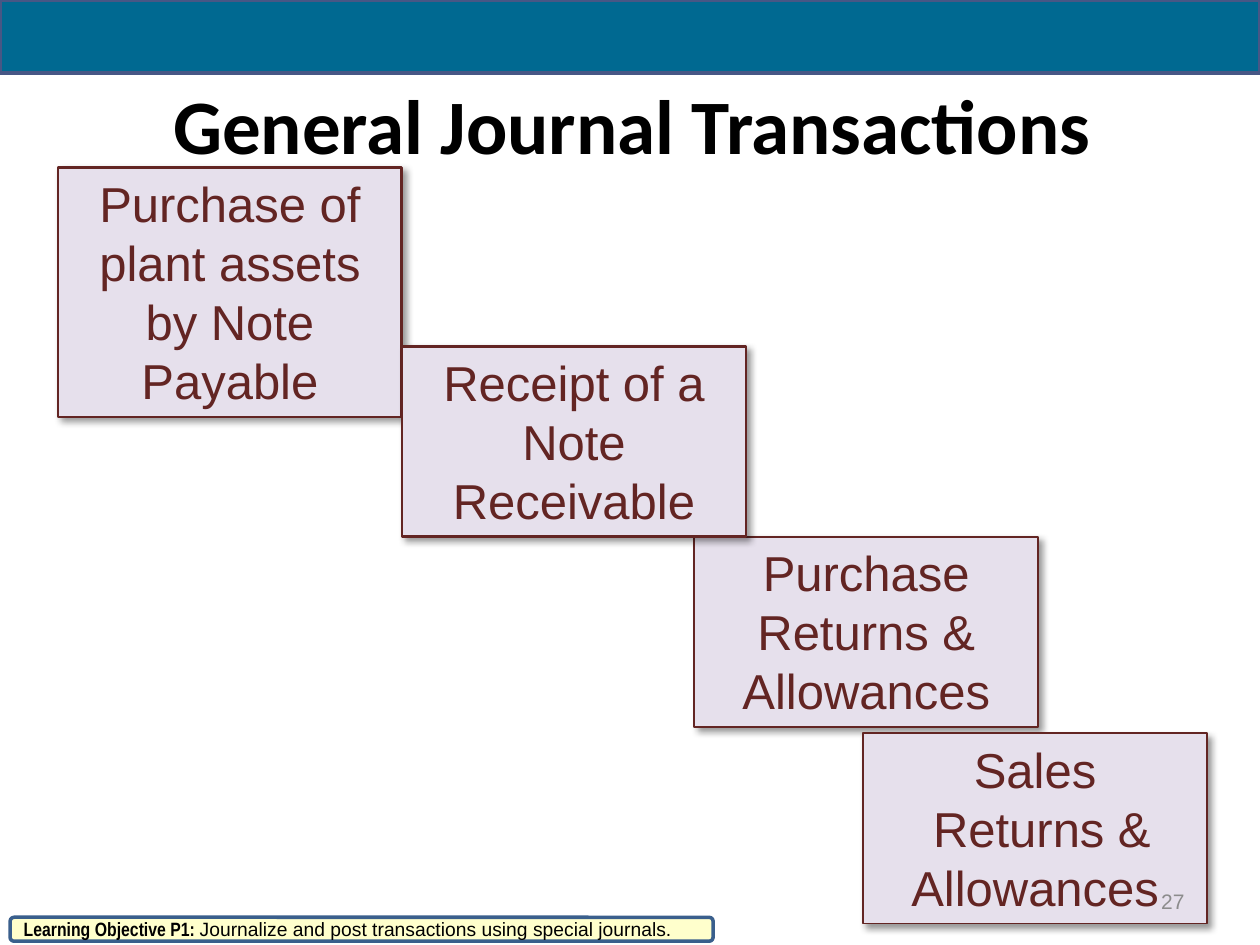
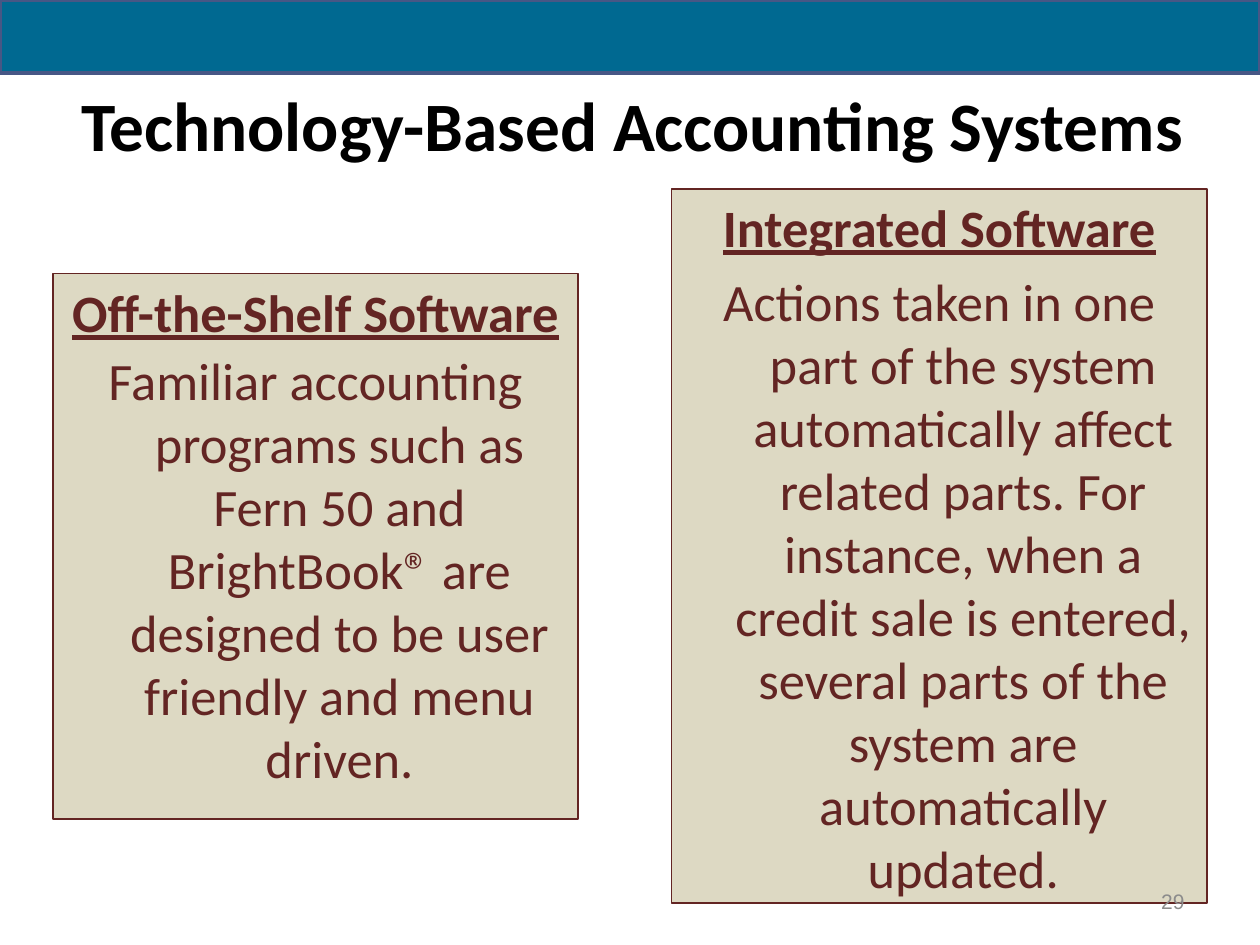
from lxml.etree import SubElement
from pptx import Presentation
from pptx.dml.color import RGBColor
from pptx.enum.shapes import MSO_SHAPE
from pptx.enum.text import MSO_ANCHOR, PP_ALIGN
from pptx.oxml.ns import qn
from pptx.util import Emu, Inches, Pt

WIDTH, HEIGHT = 10, 7.5
LEADING = 1.2
HANG = Inches(0.38)
COLORS = {
    "band": "006991", "band_edge": "475785", "title": "000000",
    "maroon": "632523", "lilac": "E6E0EC", "sand": "DDD9C3",
    "cream": "FFFFCC", "objective_edge": "3A5F8C", "number": "8C8C8C",
}

STEP_SIZE = 28
STEP_WIDTH = 2.73
STEPS = [
    ("Purchase of plant assets by Note Payable", 0.46, 1.33, 4, 1.5),
    ("Purchase Returns & Allowances", 5.51, 4.26, 3, 1),
    ("Receipt of a Note Receivable", 3.19, 2.75, 3, 1.5),
    ("Sales\v Returns & Allowances", 6.85, 5.82, 3, 1),
]
OBJECTIVE = [
    ("Learning Objective P1: ", "Arial Narrow", True),
    ("Journalize and post transactions using special journals.", "Arial", False),
]

SOFTWARE_SIZE = 30
SOFTWARE = [
    ("Off-the-Shelf Software",
     "Familiar accounting programs such as Fern 50 and BrightBook® are "
     "designed to be user friendly and menu driven.",
     (0.42, 2.17, 4.17, 4.33), 0.1),
    ("Integrated Software",
     "Actions taken in one part of the system automatically affect related "
     "parts. For instance, when a credit sale is entered, several parts of "
     "the system are automatically updated.",
     (5.33, 1.5, 4.25, 5.67), 0.2),
]


def color(name):
    return RGBColor.from_string(COLORS[name])


def style(font, size, tone, face, bold=False, underline=False):
    font.size, font.name = Pt(size), face
    font.bold, font.underline = bold, underline
    font.color.rgb = color(tone)


def add_panel(slide, area, fill, edge, weight, preset=MSO_SHAPE.RECTANGLE):
    panel = slide.shapes.add_shape(preset, *map(Inches, area))
    panel.shadow.inherit = False
    panel.fill.solid()
    panel.fill.fore_color.rgb = color(fill)
    panel.line.color.rgb = color(edge)
    panel.line.width = Pt(weight)
    panel.text_frame.word_wrap = True
    panel.text_frame.vertical_anchor = MSO_ANCHOR.TOP
    return panel


def add_label(slide, text, area, align, *look):
    frame = slide.shapes.add_textbox(*map(Inches, area)).text_frame
    frame.word_wrap = True
    frame.vertical_anchor = MSO_ANCHOR.MIDDLE
    label = frame.paragraphs[0]
    label.text, label.alignment = text, align
    style(label.font, *look)


def write_centred(paragraph, text, size, face, heading=False):
    paragraph.text, paragraph.alignment = text, PP_ALIGN.CENTER
    paragraph.line_spacing = Pt(size * LEADING)
    style(paragraph.font, size, "maroon", face, heading, heading)


def cast_shadow(panel):
    effects = panel._element.spPr.find(qn("a:effectLst"))
    shadow = SubElement(effects, qn("a:outerShdw"), blurRad=str(Pt(4)),
                        dist=str(Pt(3)), dir="2700000", algn="tl", rotWithShape="0")
    black = SubElement(shadow, qn("a:srgbClr"), val="000000")
    SubElement(black, qn("a:alpha"), val="40000")


def start_slide(deck, title, title_size):
    slide = deck.slides.add_slide(deck.slide_layouts[6])
    add_label(slide, title, (0.5, 0.42, WIDTH - 0.96, 1.13), PP_ALIGN.CENTER,
              title_size, "title", "Calibri", True)
    return slide


def finish_slide(slide, number):
    add_panel(slide, (0, 0, WIDTH, 0.58), "band", "band_edge", 2.25)
    add_label(slide, number, (7.17, 6.95, 2.33, 0.4), PP_ALIGN.RIGHT,
              12, "number", "Arial")


def add_journal_slide(deck):
    slide = start_slide(deck, "General Journal Transactions", 44)
    for text, left, top, lines, weight in STEPS:
        height = round(lines * STEP_SIZE * LEADING / 72 + 0.11, 2)
        step = add_panel(slide, (left, top, STEP_WIDTH, height),
                         "lilac", "maroon", weight)
        cast_shadow(step)
        write_centred(step.text_frame.paragraphs[0], text, STEP_SIZE, "Arial")
    finish_slide(slide, "27")
    objective = add_panel(slide, (0.08, HEIGHT - 0.22, 5.58, 0.19), "cream",
                          "objective_edge", 2, MSO_SHAPE.ROUNDED_RECTANGLE)
    objective.text_frame.vertical_anchor = MSO_ANCHOR.MIDDLE
    sentence = objective.text_frame.paragraphs[0]
    sentence.alignment = PP_ALIGN.LEFT
    for text, face, bold in OBJECTIVE:
        part = sentence.add_run()
        part.text = text
        style(part.font, 11, "title", face, bold)


def add_software_slide(deck):
    slide = start_slide(deck, "Technology-Based Accounting Systems", 39.6)
    for heading, description, area, gap in SOFTWARE:
        frame = add_panel(slide, area, "sand", "maroon", 1).text_frame
        body = frame.add_paragraph()
        write_centred(frame.paragraphs[0], heading, SOFTWARE_SIZE, "Calibri", True)
        write_centred(body, description, SOFTWARE_SIZE, "Calibri")
        body.space_before = Pt(SOFTWARE_SIZE * gap)
        for paragraph in frame.paragraphs:
            properties = paragraph._p.get_or_add_pPr()
            properties.set("marL", str(HANG))
            properties.set("indent", str(Emu(-HANG)))
    finish_slide(slide, "29")


def main():
    """Build the two accounting slides and save them."""
    deck = Presentation()
    deck.slide_width, deck.slide_height = Inches(WIDTH), Inches(HEIGHT)
    add_journal_slide(deck)
    add_software_slide(deck)
    deck.save("out.pptx")


if __name__ == "__main__":
    main()
